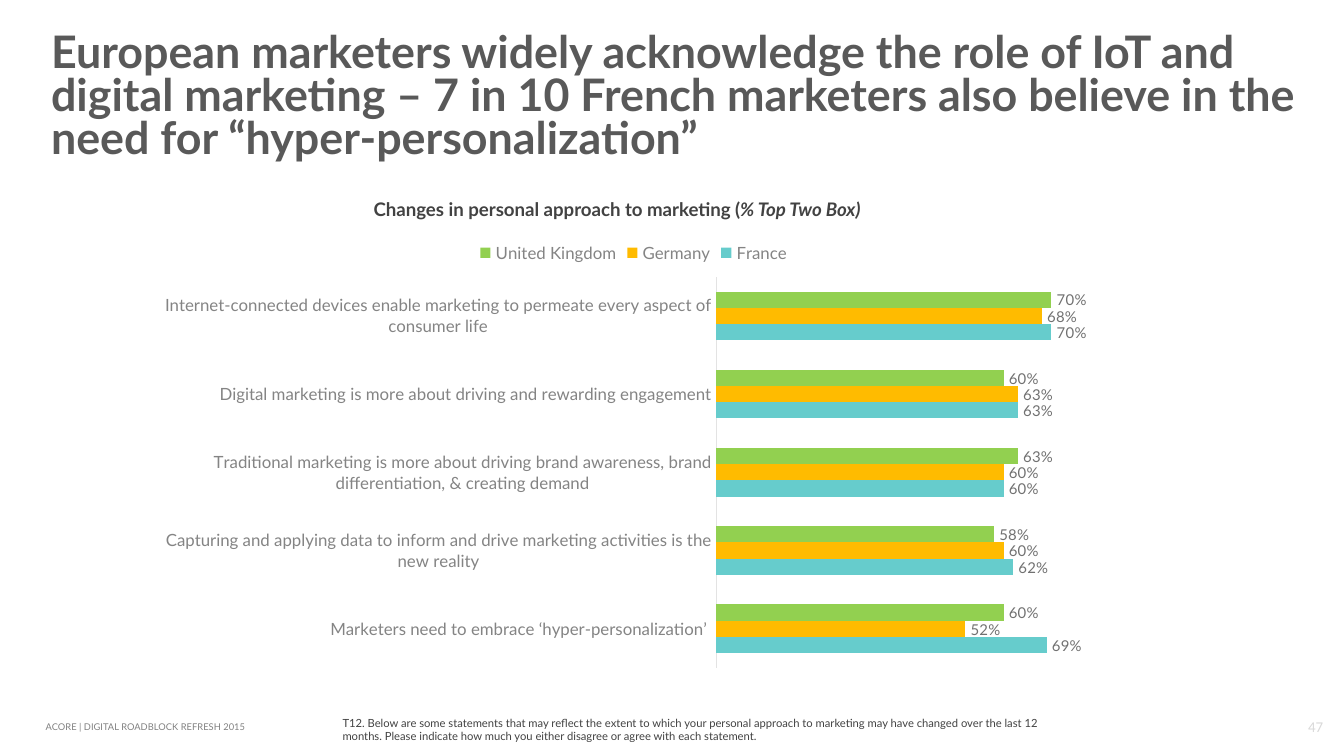
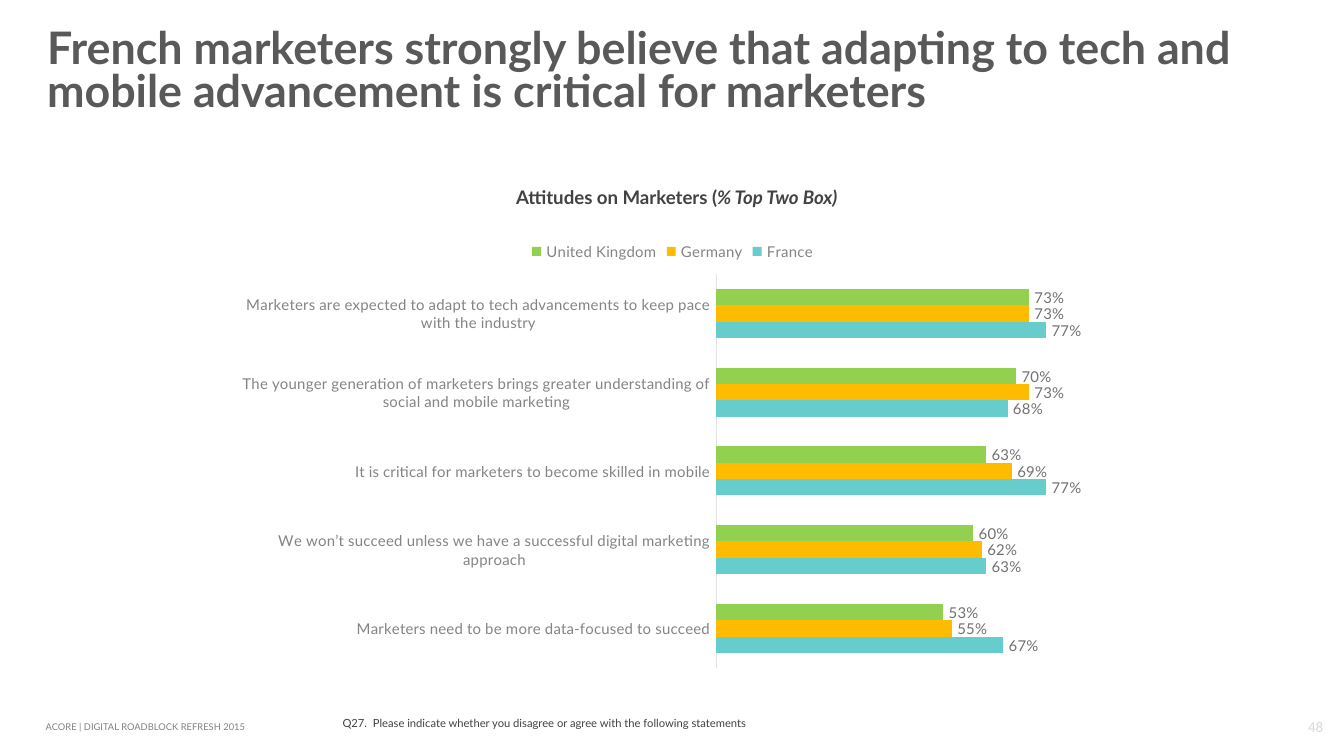
from lxml import etree
from pptx import Presentation
from pptx.chart.data import CategoryChartData
from pptx.dml.color import RGBColor
from pptx.enum.chart import (XL_CHART_TYPE, XL_LABEL_POSITION,
                             XL_LEGEND_POSITION, XL_TICK_LABEL_POSITION,
                             XL_TICK_MARK)
from pptx.enum.text import MSO_ANCHOR, MSO_AUTO_SIZE, PP_ALIGN
from pptx.oxml.ns import qn
from pptx.util import Inches, Pt

BARS = XL_CHART_TYPE.BAR_CLUSTERED
OUTSIDE = XL_LABEL_POSITION.OUTSIDE_END
TOP_KEY = XL_LEGEND_POSITION.TOP
BESIDE = XL_TICK_LABEL_POSITION.NEXT_TO_AXIS
NO_TICK = XL_TICK_MARK.NONE
TOP, MIDDLE, BOTTOM = MSO_ANCHOR.TOP, MSO_ANCHOR.MIDDLE, MSO_ANCHOR.BOTTOM
LEFT, CENTER = PP_ALIGN.LEFT, PP_ALIGN.CENTER

# Content: rows run top to bottom, values follow the order of COUNTRIES
COUNTRIES = ["United Kingdom", "Germany", "France"]
FOOTER = "ACORE | DIGITAL ROADBLOCK REFRESH 2015"
BASE = "% Top Two Box)"
SLIDES = [
    {
        "number": "47",
        "title": "European marketers widely acknowledge the role of IoT and "
                 "digital marketing – 7 in 10 French marketers also believe "
                 "in the need for “hyper-personalization”",
        "title_box": (0.28, 0.2, 9.5, 1.07),
        "head": "Changes in personal approach to marketing (",
        "head_box": (2.78, 1.47, 4.21, 0.17),
        "note": "T12. Below are some statements that may reflect the extent "
                "to which your personal approach to marketing may have "
                "changed over the last 12 months. Please indicate how much "
                "you either disagree or agree with each statement.",
        "note_high": 0.3,
        "chart_left": 1.09,
        "plot": (5.33, 2.06, 2.85, 2.91),
        "axis_size": 9,
        "axis_max": 0.8,
        "rows": [
            ("Internet-connected devices enable marketing to permeate every "
             "aspect of consumer life", 0.70, 0.68, 0.70),
            ("Digital marketing is more about driving and rewarding "
             "engagement", 0.60, 0.63, 0.63),
            ("Traditional marketing is more about driving brand awareness, "
             "brand differentiation, & creating demand", 0.63, 0.60, 0.60),
            ("Capturing and applying data to inform and drive marketing "
             "activities is the new reality", 0.58, 0.60, 0.62),
            ("Marketers need to embrace ‘hyper-personalization’ ",
             0.60, 0.52, 0.69),
        ],
    },
    {
        "number": "48",
        "title": "French marketers strongly believe that adapting to tech and "
                 "mobile advancement is critical for marketers",
        "title_box": (0.25, 0.17, 9.5, 0.75),
        "head": "Attitudes on Marketers (",
        "head_box": (3.84, 1.38, 2.74, 0.17),
        "note": "Q27.  Please indicate whether you disagree or agree with "
                "the following statements",
        "note_high": 0.2,
        "chart_left": 1.67,
        "plot": (5.33, 2.04, 2.87, 2.93),
        "axis_size": 8,
        "axis_max": 0.9,
        "rows": [
            ("Marketers are expected to adapt to tech advancements to keep "
             "pace with the industry", 0.73, 0.73, 0.77),
            ("The younger generation of marketers brings greater "
             "understanding of social and mobile marketing",
             0.70, 0.73, 0.68),
            ("It is critical for marketers to become skilled in mobile",
             0.63, 0.69, 0.77),
            ("We won’t succeed unless we have a successful digital marketing "
             "approach", 0.60, 0.62, 0.63),
            ("Marketers need to be more data-focused to succeed",
             0.53, 0.55, 0.67),
        ],
    },
]


class Theme:
    face, chart_face, page_face = "Lato", "Cabin", "Calibri"
    title, dark, label = "595959", "424242", "717171"
    axis, foot, page, rule = "848484", "808080", "D9D9D9", "E3E3E3"
    bars = {"United Kingdom": "92D050", "Germany": "FFBB00",
            "France": "66CCCC"}
    title_size, head_size, label_size = 24, 10, 8
    page_size, note_size, foot_size = 8, 6, 5


# Shared geometry, in inches; the slide is 16:9
WIDE = 10
HIGH = WIDE * 9 / 16
CHART_TOP, CHART_RIGHT, CHART_HIGH = 1.69, 8.34, 3.35
NOTE_BOX = (2.45, 5.28, 5.48)
FOOT_BOX = (0.34, 5.37, 4.16, 0.08)
PAGE_BOX = (9.65, 5.34, 0.28, 0.13)


def style(font, size, color, face=Theme.face, bold=False, italic=False):
    font.name, font.size = face, Pt(size)
    font.bold, font.italic = bold, italic
    font.color.rgb = RGBColor.from_string(color)


def write(slide, text, box, size, color, face=Theme.face, bold=False, tail="",
          anchor=TOP, align=LEFT, inset=True, wrap=True, shape=None,
          spacing=None):
    """Fill a new text box, or the given shape; tail is set in italics."""
    place = [Inches(v) for v in box]
    if shape is None:
        shape = slide.shapes.add_textbox(*place)
    else:
        shape.left, shape.top, shape.width, shape.height = place
    frame = shape.text_frame
    frame.word_wrap, frame.auto_size = wrap, MSO_AUTO_SIZE.NONE
    frame.vertical_anchor = anchor
    if not inset:
        frame.margin_left = frame.margin_right = 0
        frame.margin_top = frame.margin_bottom = 0
    para = frame.paragraphs[0]
    para.alignment = align
    if spacing:
        para.line_spacing = spacing
    for part, slant in ((text, False), (tail, True)):
        if part:
            run = para.add_run()
            run.text = part
            style(run.font, size, color, face, bold, slant)


def pin_plot(chart, box, plot):
    """Fix the inner plot area, as fractions of the chart box."""
    area = chart._chartSpace.chart.plotArea
    for old in area.findall(qn("c:layout")):
        area.remove(old)
    layout = etree.Element(qn("c:layout"))
    manual = etree.SubElement(layout, qn("c:manualLayout"))
    left, top, wide, high = box
    parts = {"layoutTarget": "inner", "xMode": "edge", "yMode": "edge",
             "x": (plot[0] - left) / wide, "y": (plot[1] - top) / high,
             "w": plot[2] / wide, "h": plot[3] / high}
    for tag, value in parts.items():
        etree.SubElement(manual, qn("c:" + tag)).set("val", str(value))
    area.insert(0, layout)


def add_bars(slide, item):
    # Bar charts stack upwards, so rows and countries are fed in reverse
    rows = item["rows"][::-1]
    data = CategoryChartData(number_format="0%")
    data.categories = [row[0] for row in rows]
    for i, name in reversed(list(enumerate(COUNTRIES, 1))):
        data.add_series(name, [row[i] for row in rows])
    left = item["chart_left"]
    box = (left, CHART_TOP, CHART_RIGHT - left, CHART_HIGH)
    chart = slide.shapes.add_chart(BARS, *map(Inches, box), data).chart
    style(chart.font, Theme.head_size, Theme.dark, Theme.chart_face)
    chart.has_title = False
    pin_plot(chart, box, item["plot"])

    # Legend
    chart.has_legend = True
    chart.legend.position = TOP_KEY
    chart.legend.include_in_layout = False
    style(chart.legend.font, item["axis_size"], Theme.axis)

    # Axes
    cat, val = chart.category_axis, chart.value_axis
    cat.major_tick_mark = cat.minor_tick_mark = NO_TICK
    cat.tick_label_position = BESIDE
    cat.format.line.color.rgb = RGBColor.from_string(Theme.rule)
    cat.format.line.width = Pt(0.75)
    style(cat.tick_labels.font, item["axis_size"], Theme.axis)
    val.visible = val.has_major_gridlines = False
    val.minimum_scale, val.maximum_scale = 0, item["axis_max"]

    # Bars and their values
    plot = chart.plots[0]
    plot.gap_width, plot.overlap = 182, 0
    plot.vary_by_categories = False
    for series in plot.series:
        fill = series.format.fill
        fill.solid()
        fill.fore_color.rgb = RGBColor.from_string(Theme.bars[series.name])
        labels = series.data_labels
        labels.show_value, labels.position = True, OUTSIDE
        labels.number_format, labels.number_format_is_linked = "0%", False
        style(labels.font, Theme.label_size, Theme.label)


def build(deck, item):
    slide = deck.slides.add_slide(deck.slide_layouts.get_by_name("Title Only"))
    write(slide, item["title"], item["title_box"], Theme.title_size,
          Theme.title, bold=True, anchor=MIDDLE, spacing=0.8,
          shape=slide.shapes.title)
    write(slide, item["number"], PAGE_BOX, Theme.page_size, Theme.page,
          face=Theme.page_face, anchor=BOTTOM, align=CENTER, inset=False)
    write(slide, FOOTER, FOOT_BOX, Theme.foot_size, Theme.foot,
          anchor=MIDDLE, inset=False)
    write(slide, item["note"], (*NOTE_BOX, item["note_high"]),
          Theme.note_size, Theme.dark)
    write(slide, item["head"], item["head_box"], Theme.head_size, Theme.dark,
          bold=True, tail=BASE, inset=False, wrap=False)
    add_bars(slide, item)


def main():
    deck = Presentation()
    deck.slide_width, deck.slide_height = Inches(WIDE), Inches(HIGH)
    for item in SLIDES:
        build(deck, item)
    deck.save("out.pptx")


if __name__ == "__main__":
    main()
